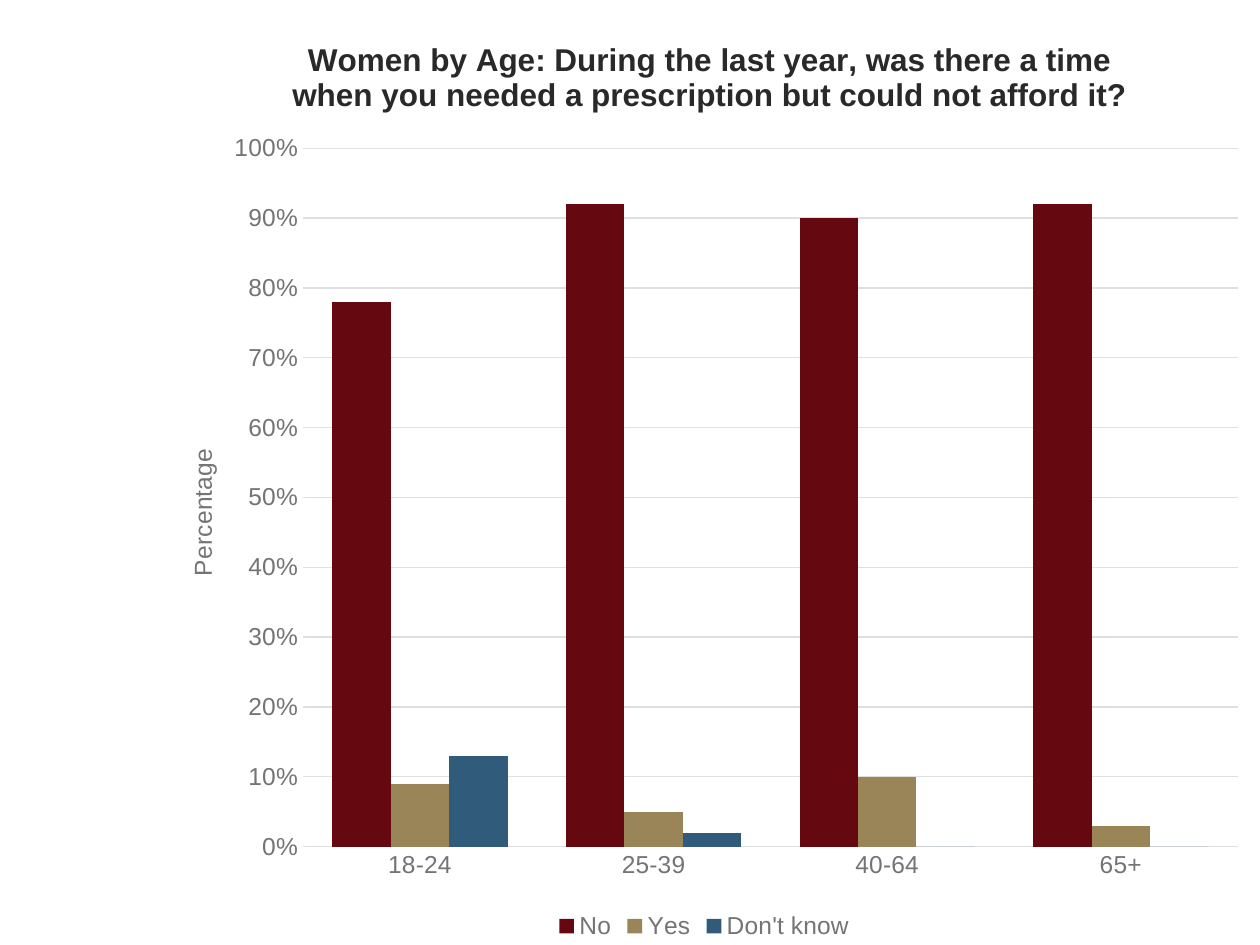
from dataclasses import dataclass

from lxml.etree import SubElement
from pptx import Presentation
from pptx.chart.data import CategoryChartData
from pptx.dml.color import RGBColor
from pptx.enum.chart import XL_CHART_TYPE, XL_LEGEND_POSITION, XL_TICK_MARK
from pptx.oxml.ns import qn
from pptx.util import Pt


@dataclass(frozen=True)
class Theme:
    font: str = "Arial"
    heading: RGBColor = RGBColor(0x29, 0x29, 0x29)
    label: RGBColor = RGBColor(0x74, 0x74, 0x74)
    rule: RGBColor = RGBColor(0xDF, 0xDF, 0xDF)
    heading_size: Pt = Pt(18)
    label_size: Pt = Pt(14)
    base_size: Pt = Pt(10)
    rule_width: Pt = Pt(0.75)


@dataclass(frozen=True)
class Answer:
    name: str
    shares: tuple[float, ...]
    color: RGBColor


THEME = Theme()
AGE_GROUPS = ("18-24", "25-39", "40-64", "65+")
ANSWERS = (
    Answer("No", (0.78, 0.92, 0.9, 0.92), RGBColor(0x66, 0x08, 0x0F)),
    Answer("Yes", (0.09, 0.05, 0.1, 0.03), RGBColor(0x99, 0x85, 0x57)),
    Answer("Don't know", (0.13, 0.02, 0, 0), RGBColor(0x30, 0x5B, 0x7B)),
)
QUESTION = ("Women by Age: During the last year, was there a time "
            "when you needed a prescription but could not afford it?")


def style_font(font, size: Pt, color: RGBColor, bold: bool = False) -> None:
    font.name = THEME.font
    font.size = size
    font.bold = bold
    font.color.rgb = color


def style_rule(line) -> None:
    line.color.rgb = THEME.rule
    line.width = THEME.rule_width


def set_title(title, text: str, size: Pt, color: RGBColor, bold: bool = False) -> None:
    title.text_frame.text = text
    style_font(title.text_frame.paragraphs[0].font, size, color, bold)


def place(parent, follower: str, **fractions: float) -> None:
    """Fix a chart part at fractions of the chart area."""
    layout = parent.find(qn("c:layout"))
    if layout is None:
        layout = parent.makeelement(qn("c:layout"))
        parent.find(qn(follower)).addprevious(layout)
    manual = SubElement(layout, qn("c:manualLayout"))
    if "w" in fractions:
        SubElement(manual, qn("c:layoutTarget")).set("val", "inner")
    for side in "xy":
        SubElement(manual, qn(f"c:{side}Mode")).set("val", "edge")
    for key, value in fractions.items():
        SubElement(manual, qn(f"c:{key}")).set("val", str(value))


def add_answer_chart(slide) -> None:
    survey = CategoryChartData(number_format="0%")
    survey.categories = AGE_GROUPS
    for answer in ANSWERS:
        survey.add_series(answer.name, answer.shares)
    chart = slide.shapes.add_chart(
        XL_CHART_TYPE.COLUMN_CLUSTERED, Pt(85), Pt(0), Pt(635), Pt(540), survey
    ).chart
    style_font(chart.font, THEME.base_size, THEME.heading)

    # Question as heading
    set_title(chart.chart_title, QUESTION, THEME.heading_size, THEME.heading, True)

    # Columns
    columns = chart.plots[0]
    columns.gap_width = 100
    columns.overlap = 0
    columns.vary_by_categories = False
    for series, answer in zip(columns.series, ANSWERS):
        series.format.fill.solid()
        series.format.fill.fore_color.rgb = answer.color
        series.invert_if_negative = False

    # Axes
    ages, shares = chart.category_axis, chart.value_axis
    for axis in (ages, shares):
        axis.major_tick_mark = axis.minor_tick_mark = XL_TICK_MARK.NONE
        style_font(axis.tick_labels.font, THEME.label_size, THEME.label)
    style_rule(ages.format.line)
    shares.format.line.fill.background()
    style_rule(shares.major_gridlines.format.line)
    shares.minimum_scale, shares.maximum_scale, shares.major_unit = 0, 1, 0.1
    shares.tick_labels.number_format = "0%"
    shares.tick_labels.number_format_is_linked = False
    set_title(shares.axis_title, "Percentage", THEME.label_size, THEME.label)

    # Legend
    chart.has_legend = True
    chart.legend.position = XL_LEGEND_POSITION.BOTTOM
    chart.legend.include_in_layout = False
    style_font(chart.legend.font, THEME.label_size, THEME.label)

    # Placement inside the chart area
    plot_area = chart._chartSpace.chart.plotArea
    place(plot_area, "c:barChart", x=0.139, y=0.157, w=0.841, h=0.739)
    place(chart.chart_title._element, "c:overlay", x=0.124, y=0.035)
    place(shares.axis_title._element, "c:overlay", x=0.03, y=0.47)


def main() -> None:
    deck = Presentation()
    deck.slide_width, deck.slide_height = Pt(720), Pt(540)
    slide = deck.slides.add_slide(deck.slide_layouts[6])
    add_answer_chart(slide)
    deck.save("out.pptx")


if __name__ == "__main__":
    main()
